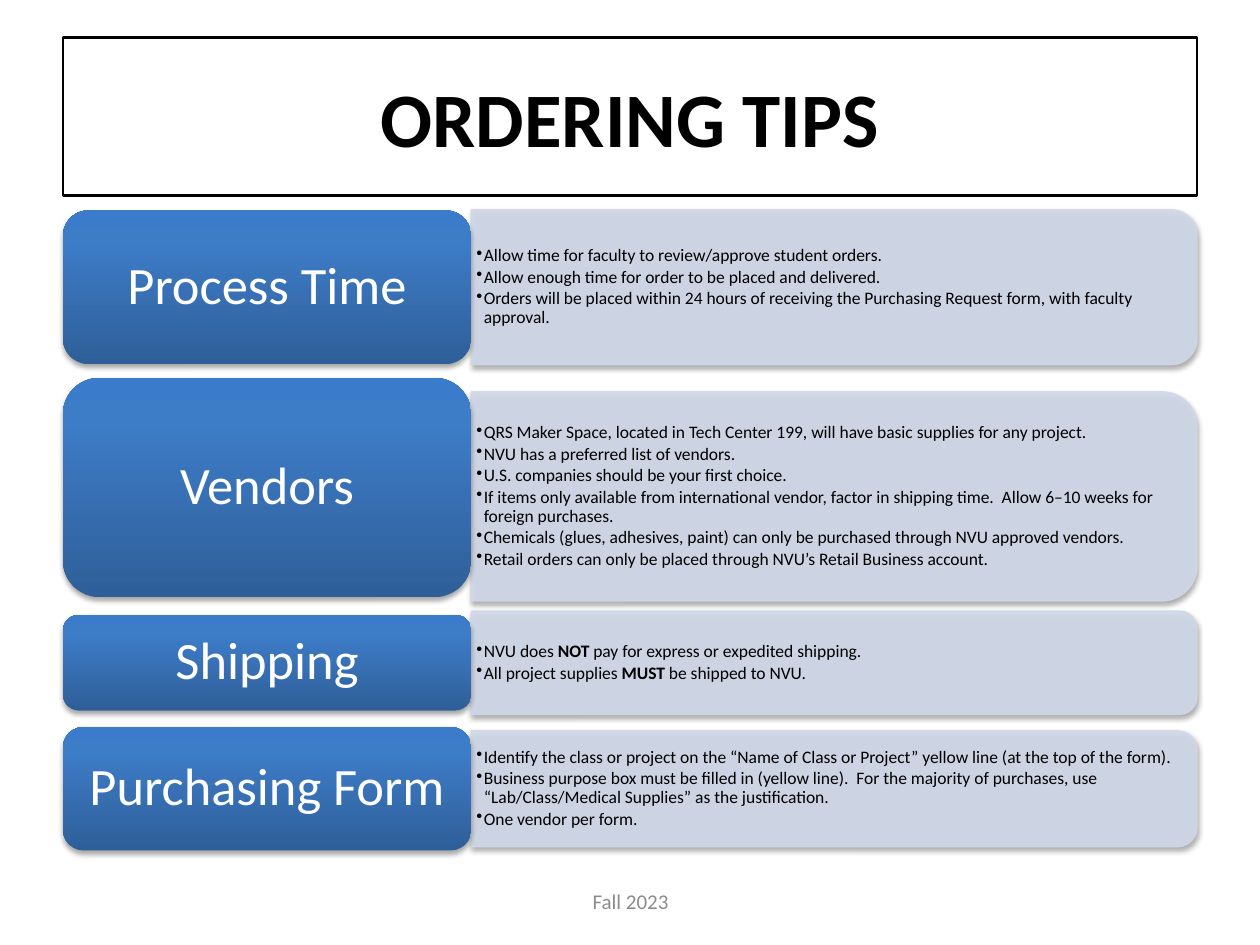
"""Build the Ordering Tips slide: four headings, each beside a panel of bullets."""
from copy import deepcopy

from lxml.etree import SubElement
from pptx import Presentation
from pptx.dml.color import RGBColor
from pptx.enum.shapes import MSO_SHAPE
from pptx.enum.text import MSO_ANCHOR, PP_ALIGN
from pptx.oxml.ns import qn
from pptx.util import Inches, Pt

COLORS = {
    "ink": "000000", "paper": "FFFFFF", "panel": "D0D8E8", "footer": "8C8C8C",
    "low": "2F5F99", "middle": "3D7CC7", "high": "3A7CCB",
}
GRADIENT = [(0, "low"), (0.8, "middle"), (1, "high")]
TITLE = {"size": Pt(44), "bold": True, "color": "ink"}
HEADING = {"size": Pt(30), "color": "paper"}
BULLET = {"size": Pt(10), "color": "ink"}
FOOTER = {"size": Pt(12), "color": "footer"}
CENTERED = {"alignment": PP_ALIGN.CENTER}
HEADING_LINES = {"alignment": PP_ALIGN.CENTER, "line_spacing": 0.9}
BULLET_LINES = {"alignment": PP_ALIGN.LEFT, "line_spacing": 0.9, "space_after": Pt(1.5)}

SECTIONS = [
    ("Process Time", 16.7, 12.2, 22.8, 12.3, [
        "Allow time for faculty to review/approve student orders.",
        "Allow enough time for order to be placed and delivered.",
        "Orders will be placed within 24 hours of receiving the Purchasing Request form, "
        "with faculty approval.",
    ]),
    ("Vendors", 30, 17.4, 39.4, 16.6, [
        "QRS Maker Space, located in Tech Center 199, will have basic supplies for any project.",
        "NVU has a preferred list of vendors.",
        "U.S. companies should be your first choice.",
        "If items only available from international vendor, factor in shipping time.  "
        "Allow 6–10 weeks for foreign purchases.",
        "Chemicals (glues, adhesives, paint) can only be purchased through NVU approved vendors.",
        "Retail orders can only be placed through NVU’s Retail Business account.",
    ]),
    ("Shipping", 48.8, 7.6, 52.6, 8.2, [
        "NVU does **NOT** pay for express or expedited shipping.",
        "All project supplies **MUST** be shipped to NVU.",
    ]),
    ("Purchasing Form", 57.7, 9.8, 62.6, 9.2, [
        "Identify the class or project on the “Name of Class or Project” yellow line "
        "(at the top of the form).",
        "Business purpose box must be filled in (yellow line).  For the majority of purchases, "
        "use “Lab/Class/Medical Supplies” as the justification.",
        "One vendor per form.",
    ]),
]

presentation = Presentation()
presentation.slide_width, presentation.slide_height = Inches(10), Inches(7.5)
slide = presentation.slides.add_slide(presentation.slide_layouts[6])
column, row = presentation.slide_width / 100, presentation.slide_height / 75
LEFT, HEADING_WIDTH, PANEL_LEFT, PANEL_WIDTH = 5, 32.4, 37.4, 57.6


def add_box(kind, left, top, width, height, shadow=False):
    box = [int(left * column), int(top * row), int(width * column), int(height * row)]
    if kind is None:
        return slide.shapes.add_textbox(*box)
    shape = slide.shapes.add_shape(kind, *box)
    shape.shadow.inherit = False
    if shadow:
        effects = shape.element.spPr.find(qn("a:effectLst"))
        outer = SubElement(effects, qn("a:outerShdw"), blurRad=str(Pt(3.1)),
                           dist=str(Pt(1.8)), dir="5400000", rotWithShape="0")
        color = SubElement(outer, qn("a:srgbClr"), val=COLORS["ink"])
        SubElement(color, qn("a:alpha"), val="35000")
    return shape


def write(shape, lines, font_format, line_format, margins=(0.1, 0.05), bullet=False):
    frame = shape.text_frame
    frame.word_wrap = True
    frame.vertical_anchor = MSO_ANCHOR.MIDDLE
    frame.margin_left = frame.margin_right = Inches(margins[0])
    frame.margin_top = frame.margin_bottom = Inches(margins[1])
    for number, line in enumerate(lines):
        paragraph = frame.add_paragraph() if number else frame.paragraphs[0]
        for name, value in line_format.items():
            setattr(paragraph, name, value)
        if bullet:
            properties = paragraph._p.get_or_add_pPr()
            properties.set("marL", str(Inches(0.06)))
            properties.set("indent", str(-Inches(0.06)))
            SubElement(properties, qn("a:buChar"), char="•")
        for position, part in enumerate(line.split("**")):
            run = paragraph.add_run()
            run.text = part
            run.font.name = "Calibri"
            for name, value in font_format.items():
                if name == "color":
                    run.font.color.rgb = RGBColor.from_string(COLORS[value])
                else:
                    setattr(run.font, name, value)
            if position % 2:
                run.font.bold = True


title = add_box(MSO_SHAPE.RECTANGLE, LEFT, 3, 90, 12.5)
title.fill.background()
title.line.color.rgb = RGBColor.from_string(COLORS["ink"])
title.line.width = Pt(1.5)
write(title, ["ORDERING TIPS"], TITLE, CENTERED)

for name, top, height, middle, thickness, tips in SECTIONS:
    panel = add_box(MSO_SHAPE.ROUND_2_SAME_RECTANGLE,
                    PANEL_LEFT + (PANEL_WIDTH - thickness) / 2, middle - PANEL_WIDTH / 2,
                    thickness, PANEL_WIDTH, shadow=True)
    panel.rotation = 90
    panel.fill.solid()
    panel.line.width = Pt(0.75)
    for paint in (panel.fill.fore_color, panel.line.color):
        paint.rgb = RGBColor.from_string(COLORS["panel"])
    for color in panel.element.spPr.findall(".//" + qn("a:solidFill") + "/" + qn("a:srgbClr")):
        SubElement(color, qn("a:alpha"), val="90000")

    text = add_box(None, PANEL_LEFT, middle - 0.45 * thickness,
                   PANEL_WIDTH - 0.05 * thickness, 0.9 * thickness)
    write(text, tips, BULLET, BULLET_LINES, (0.04, 0.02), bullet=True)

    heading = add_box(MSO_SHAPE.ROUNDED_RECTANGLE, LEFT, top, HEADING_WIDTH, height, shadow=True)
    heading.line.fill.background()
    heading.fill.gradient()
    heading.fill.gradient_angle = 90
    stops = heading.element.spPr.find(".//" + qn("a:gsLst"))
    stops.append(deepcopy(stops[0]))
    for stop, (position, color) in zip(heading.fill.gradient_stops, GRADIENT):
        stop.position = position
        stop.color.rgb = RGBColor.from_string(COLORS[color])
    write(heading, [name], HEADING, HEADING_LINES, (0.12, 0.06))

footer = add_box(None, 34.2, 69.5, 31.7, 4)
write(footer, ["Fall 2023"], FOOTER, CENTERED)

presentation.save("out.pptx")
